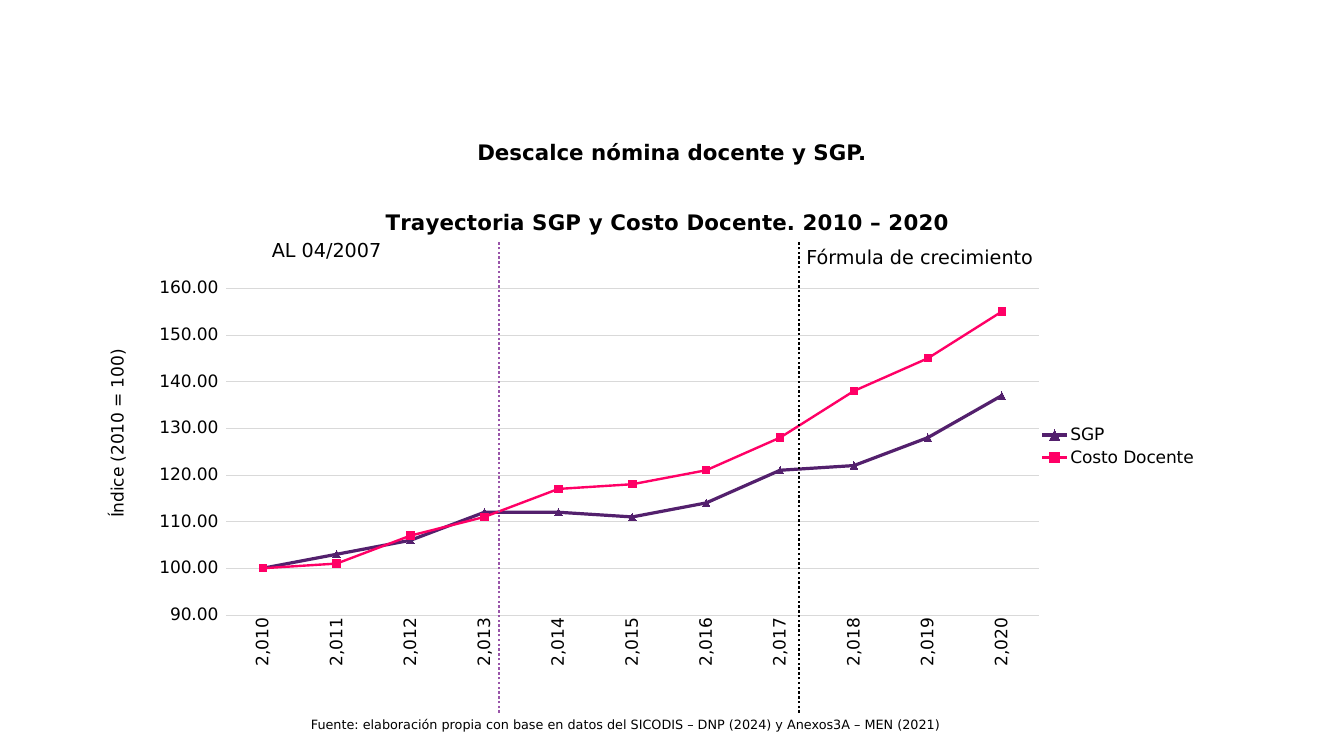
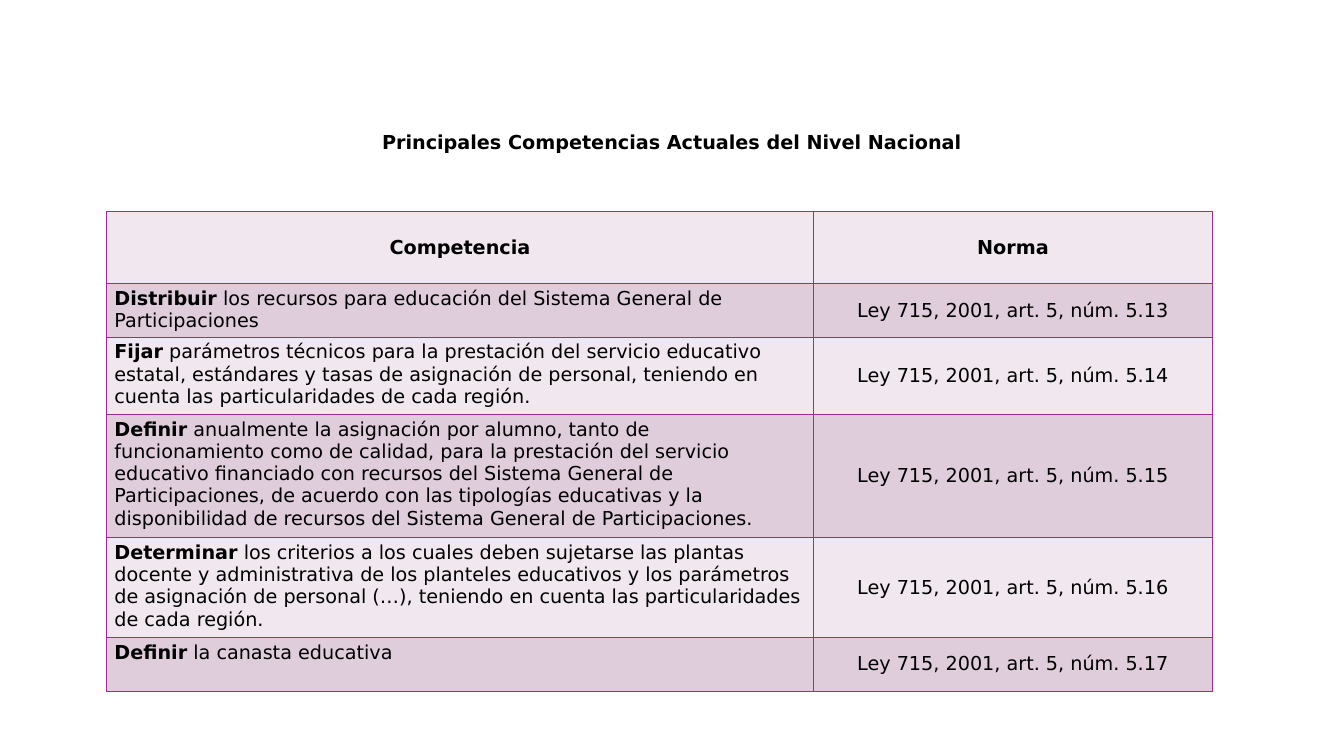
"""Builds two slides: teacher payroll trend chart and national competences table."""
from dataclasses import dataclass

from lxml import etree
from pptx import Presentation, util as u
from pptx.chart.data import CategoryChartData
from pptx.dml.color import RGBColor
from pptx.enum import chart as charts, dml, shapes, text
from pptx.oxml.ns import qn

WIDTH, HEIGHT = u.Inches(17.5), u.Inches(9.84)


@dataclass(frozen=True)
class Theme:
    """Colours, font and type sizes of the deck."""
    font: str = "DejaVu Sans"
    ink: str = "000000"
    grid: str = "D9D9D9"
    sgp: str = "53206D"
    cost: str = "FF0066"
    divider: str = "9955A9"
    border: str = "A02B93"
    bands: tuple = ("F0E8EE", "DFCDDC")
    headline: int = 20
    body: int = 18
    axis: int = 16
    source: int = 12


THEME = Theme()

YEARS = range(2010, 2021)
SERIES = [
    ("SGP", [100, 103, 106, 112, 112, 111, 114, 121, 122, 128, 137],
     THEME.sgp, 3, charts.XL_MARKER_STYLE.TRIANGLE),
    ("Costo Docente", [100, 101, 107, 111, 117, 118, 121, 128, 138, 145, 155],
     THEME.cost, 2.25, charts.XL_MARKER_STYLE.SQUARE),
]
COMPETENCES = [
    ("Distribuir", " los recursos para educación del Sistema General de Participaciones", 7),
    ("Fijar", " parámetros técnicos para la prestación del servicio educativo estatal, "
     "estándares y tasas de asignación de personal, teniendo en cuenta las "
     "particularidades de cada región.", 10.2),
    ("Definir", " anualmente la asignación por alumno, tanto de funcionamiento como de "
     "calidad, para la prestación del servicio educativo financiado con recursos del "
     "Sistema General de Participaciones, de acuerdo con las tipologías educativas y la "
     "disponibilidad de recursos del Sistema General de Participaciones.", 16.3),
    ("Determinar", " los criterios a los cuales deben sujetarse las plantas docente y "
     "administrativa de los planteles educativos y los parámetros de asignación de "
     "personal (…), teniendo en cuenta las particularidades de cada región.", 13.2),
    ("Definir", " la canasta educativa", 7.1),
]


def across(percent):
    """Turn a percentage of the slide width into a length."""
    return u.Emu(round(WIDTH * percent / 100))


def down(percent):
    """Turn a percentage of the slide height into a length."""
    return u.Emu(round(HEIGHT * percent / 100))


def area(left, top, width, height):
    """Turn percentages of the slide into a placed rectangle."""
    return across(left), down(top), across(width), down(height)


def style(font, size, bold=False, color=THEME.ink):
    """Apply the deck's typeface to a font."""
    font.name, font.size, font.bold = THEME.font, u.Pt(size), bold
    font.color.rgb = RGBColor.from_string(color)


def stroke(line, color, width):
    """Give a line its colour and width."""
    line.color.rgb = RGBColor.from_string(color)
    line.width = u.Pt(width)


def add_label(slide, wording, place, size, bold=False, align=text.PP_ALIGN.LEFT):
    """Add a one-paragraph text box."""
    frame = slide.shapes.add_textbox(*area(*place)).text_frame
    frame.word_wrap = True
    frame.auto_size = text.MSO_AUTO_SIZE.SHAPE_TO_FIT_TEXT
    paragraph = frame.paragraphs[0]
    paragraph.text, paragraph.alignment = wording, align
    style(paragraph.font, size, bold)


def add_heading(slide, wording, top, size):
    """Add the centred bold heading of a slide."""
    add_label(slide, wording, (21.54, top, 56.91, 4.5), size, True, text.PP_ALIGN.CENTER)


def add_divider(slide, column, color):
    """Add a dotted vertical line that separates two periods."""
    divider = slide.shapes.add_connector(
        shapes.MSO_CONNECTOR.STRAIGHT, across(column), down(94.3), across(column), down(32))
    stroke(divider.line, color, 2.25)
    divider.line.dash_style = dml.MSO_LINE.ROUND_DOT
    etree.SubElement(divider._element.spPr, qn("a:effectLst"))


def set_layout(element, index, **settings):
    """Place a chart part by shares of the chart's size."""
    for old in element.findall(qn("c:layout")):
        element.remove(old)
    layout = etree.Element(qn("c:layout"))
    manual = etree.SubElement(layout, qn("c:manualLayout"))
    for tag, value in settings.items():
        etree.SubElement(manual, qn(f"c:{tag}")).set("val", str(value))
    element.insert(index, layout)


def set_chart_title(title, wording, size, bold, x, y):
    """Write and place the title of a chart or an axis."""
    paragraph = title.text_frame.paragraphs[0]
    paragraph.text = wording
    style(paragraph.font, size, bold)
    set_layout(title._element, 1, xMode="edge", yMode="edge", x=x, y=y)


def format_axes(chart):
    """Set scale, grid, labels and title of both axes."""
    years, index = chart.category_axis, chart.value_axis
    for axis, number_format in ((years, "#,##0"), (index, "0.00")):
        style(axis.tick_labels.font, THEME.axis)
        axis.tick_labels.number_format = number_format
        axis.tick_labels.number_format_is_linked = False
    years.major_tick_mark = charts.XL_TICK_MARK.NONE
    years._element.find(qn("c:txPr")).find(qn("a:bodyPr")).set("rot", "-5400000")
    stroke(years.format.line, THEME.grid, 0.75)
    index.minimum_scale, index.maximum_scale, index.major_unit = 90, 160, 10
    index.format.line.fill.background()
    stroke(index.major_gridlines.format.line, THEME.grid, 0.75)
    set_chart_title(index.axis_title, "Índice (2010 = 100)", THEME.axis, False, 0.01, 0.31)
    body = index.axis_title.text_frame._txBody.bodyPr
    body.set("rot", "-5400000")
    body.set("vert", "horz")


def format_series(series, color, width, marker):
    """Colour a line and its markers."""
    series.smooth = False
    stroke(series.format.line, color, width)
    series.marker.style, series.marker.size = marker, 7
    series.marker.format.fill.solid()
    series.marker.format.fill.fore_color.rgb = RGBColor.from_string(color)
    stroke(series.marker.format.line, color, 0.75)


def add_trend_chart(slide):
    """Add the line chart of both indices."""
    data = CategoryChartData(number_format="0.00")
    data.categories = YEARS
    data.categories.number_format = "#,##0"
    for name, values, *_ in SERIES:
        data.add_series(name, values)
    chart = slide.shapes.add_chart(
        charts.XL_CHART_TYPE.LINE_MARKERS, *area(6.86, 24.2, 82.86, 69.7), data).chart
    style(chart.font, THEME.axis)
    set_chart_title(chart.chart_title, "Trayectoria SGP y Costo Docente. 2010 – 2020",
                    THEME.headline, True, 0.26, 0.04)
    format_axes(chart)
    chart.plots[0].vary_by_categories = False
    for series, (_, _, color, width, marker) in zip(chart.plots[0].series, SERIES):
        format_series(series, color, width, marker)
    chart.has_legend = True
    chart.legend.position = charts.XL_LEGEND_POSITION.RIGHT
    chart.legend.include_in_layout = False
    style(chart.legend.font, THEME.axis)
    set_layout(chart._chartSpace.chart.plotArea, 0, layoutTarget="inner",
               xMode="edge", yMode="edge", x=0.12, y=0.2, w=0.73, h=0.62)


def fill_cell(cell, parts, band, align, anchor=text.MSO_ANCHOR.MIDDLE):
    """Write (wording, bold) parts in a bordered, tinted cell."""
    properties = cell._tc.get_or_add_tcPr()
    for side in ("lnL", "lnR", "lnT", "lnB"):
        edge = etree.SubElement(properties, qn(f"a:{side}"), w=str(u.Pt(1)))
        paint = etree.SubElement(edge, qn("a:solidFill"))
        etree.SubElement(paint, qn("a:srgbClr"), val=THEME.border)
    cell.fill.solid()
    cell.fill.fore_color.rgb = RGBColor.from_string(THEME.bands[band % 2])
    cell.vertical_anchor = anchor
    paragraph = cell.text_frame.paragraphs[0]
    paragraph.alignment = align
    for wording, bold in parts:
        run = paragraph.add_run()
        run.text = wording
        style(run.font, THEME.body, bold)


def add_competence_table(slide):
    """Add the table of competences and their legal basis."""
    heights = [9.55] + [height for *_, height in COMPETENCES]
    table = slide.shapes.add_table(
        len(heights), 2, *area(7.94, 27.95, 82.28, sum(heights))).table
    table.horz_banding = False
    for column, width in zip(table.columns, (52.57, 29.71)):
        column.width = across(width)
    for row, height in zip(table.rows, heights):
        row.height = down(height)
    center, left = text.PP_ALIGN.CENTER, text.PP_ALIGN.LEFT
    for column, heading in enumerate(("Competencia", "Norma")):
        fill_cell(table.cell(0, column), [(heading, True)], 0, center)
    for row, (verb, duty, _) in enumerate(COMPETENCES, 1):
        fill_cell(table.cell(row, 0), [(verb, True), (duty, False)], row, left,
                  text.MSO_ANCHOR.TOP)
        norm = f"Ley 715, 2001, art. 5, núm. 5.{12 + row}"
        fill_cell(table.cell(row, 1), [(norm, False)], row, center)


def build_trend_slide(slide):
    """Build the slide on payroll cost against SGP."""
    add_heading(slide, "Descalce nómina docente y SGP.", 17.9, THEME.headline)
    add_trend_chart(slide)
    add_divider(slide, 37.14, THEME.divider)
    add_divider(slide, 59.43, THEME.ink)
    add_label(slide, "AL 04/2007", (19.66, 31, 11.5, 4.7), THEME.body)
    add_label(slide, "Fórmula de crecimiento", (59.43, 32, 23.5, 4.7), THEME.body)
    add_label(slide, "Fuente: elaboración propia con base en datos del SICODIS – DNP (2024) "
              "y Anexos3A – MEN (2021)", (22.57, 94.3, 67.14, 3.05), THEME.source)


def build_competence_slide(slide):
    """Build the slide on national competences."""
    add_heading(slide, "Principales Competencias Actuales del Nivel Nacional", 16.8, THEME.body)
    add_competence_table(slide)


def main():
    """Build and save the deck."""
    deck = Presentation()
    deck.slide_width, deck.slide_height = WIDTH, HEIGHT
    for build in (build_trend_slide, build_competence_slide):
        build(deck.slides.add_slide(deck.slide_layouts[6]))
    deck.save("out.pptx")


if __name__ == "__main__":
    main()
